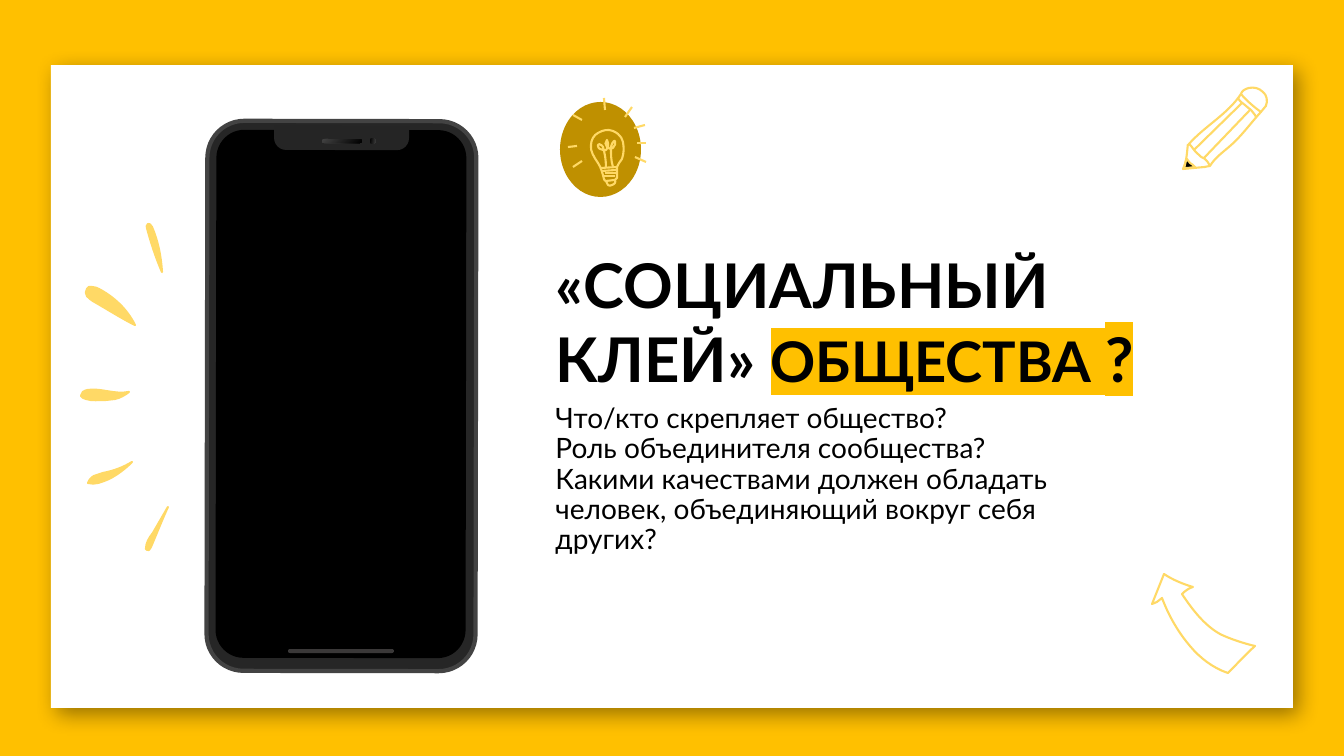
"""Builds a yellow slide with a phone, a heading, questions and line doodles."""
from lxml.etree import SubElement
from pptx import Presentation
from pptx.dml.color import RGBColor
from pptx.enum.shapes import MSO_CONNECTOR, MSO_SHAPE
from pptx.enum.text import MSO_ANCHOR
from pptx.oxml import parse_xml
from pptx.oxml.ns import nsdecls, qn
from pptx.util import Emu, Pt

PX = 914400 / 100.8
INK = {
    "gold": "FFC000", "white": "FFFFFF", "black": "000000", "case": "262626",
    "rim": "434343", "notch": "252525", "bar": "3A3838", "dark": "010101",
    "pale": "FFD966", "disc": "BF9000",
}
RGB = {name: RGBColor.from_string(code) for name, code in INK.items()}

deck = Presentation()
deck.slide_width, deck.slide_height = Emu(round(1344 * PX)), Emu(round(756 * PX))
slide = deck.slides.add_slide(deck.slide_layouts[6])
slide.background.fill.solid()
slide.background.fill.fore_color.rgb = RGB["gold"]
shapes = slide.shapes


def block(kind, box, color, turn=0, adj=()):
    item = shapes.add_shape(kind, *[Emu(round(n * PX)) for n in box])
    item.shadow.inherit = False
    item.fill.solid()
    item.fill.fore_color.rgb = RGB[color]
    item.line.fill.background()
    item.rotation = turn
    for i, part in enumerate(adj):
        item.adjustments[i] = part
    return item


def draw(steps, color=None):
    dots = [step[i:i + 2] for step in steps for i in range(0, len(step), 2)]
    pen = shapes.build_freeform(*dots[0], scale=PX)
    pen.add_line_segments(dots[1:], close=dots[0] == dots[-1])
    item = pen.convert_to_shape()
    legs = iter(list(item._element.spPr.iter(qn("a:lnTo"))))
    for step in steps[1:]:
        leg = next(legs)
        if len(step) == 6:
            leg.tag = qn("a:cubicBezTo")
            for rest in (next(legs), next(legs)):
                leg.append(rest[0])
                rest.getparent().remove(rest)
    item.shadow.inherit = False
    if color:
        item.fill.solid()
        item.fill.fore_color.rgb = RGB[color]
    else:
        item.fill.background()
    item.line.color.rgb = RGB["pale"]
    item.line.width = Pt(1.5)


card = block(MSO_SHAPE.RECTANGLE, (51, 65, 1242, 643), "white")
glow = card._element.spPr.find(qn("a:effectLst"))
glow.append(parse_xml(
    f'<a:outerShdw {nsdecls("a")} blurRad="190500" dist="88900" dir="2700000" algn="tl" '
    'rotWithShape="0"><a:srgbClr val="000000"><a:alpha val="40000"/></a:srgbClr></a:outerShdw>'))

case = block(MSO_SHAPE.ROUNDED_RECTANGLE, (207, 121, 269, 550), "case", 0.1, [0.137])
case.line.color.rgb = RGB["rim"]
case.line.width = Pt(3)
block(MSO_SHAPE.ROUNDED_RECTANGLE, (216, 130, 250, 528), "black", 0.1, [0.112])
block(MSO_SHAPE.ROUND_2_SAME_RECTANGLE, (274, 126, 135, 24), "notch", 180.1, [0.5, 0])
block(MSO_SHAPE.ROUNDED_RECTANGLE, (288, 649, 106, 4), "bar", 0, [0.5])
lens = block(MSO_SHAPE.OVAL, (370, 138, 6, 6), "rim", 97.1)
slot = block(MSO_SHAPE.ROUNDED_RECTANGLE, (322, 139, 40, 4), "rim", 0, [0.5])
for item, angle in ((lens, 270), (slot, 315)):
    item.fill.gradient()
    item.fill.gradient_angle = angle
    for stop, color in zip(item.fill.gradient_stops, ("rim", "dark")):
        stop.color.rgb = RGB[color]

pars = []
for box in ((542, 234, 641, 137), (542, 391, 602, 187)):
    frame = shapes.add_textbox(*[Emu(round(n * PX)) for n in box]).text_frame
    frame.word_wrap = True
    frame.vertical_anchor = MSO_ANCHOR.TOP
    frame.margin_left = frame.margin_right = Pt(9.6)
    frame.margin_top = frame.margin_bottom = Pt(9.6)
    par = frame.paragraphs[0]
    par.font.name = "Lato"
    par.font.color.rgb = RGB["black"]
    pars.append(par)
title, body = pars

title.font.bold = True
for words, size, mark in (("«СОЦИАЛЬНЫЙ КЛЕЙ» ", 44, False),
                          ("ОБЩЕСТВА ", 40, True), ("?", 44, True)):
    run = title.add_run()
    run.text = words
    run.font.size = Pt(size)
    if mark:
        light = SubElement(run._r.get_or_add_rPr(), qn("a:highlight"))
        SubElement(light, qn("a:srgbClr")).set("val", INK["gold"])

body.text = ("Что/кто скрепляет общество?\vРоль объединителя сообщества?\v"
             "Какими качествами должен обладать человек, объединяющий вокруг себя других?")
body.font.size = Pt(20)
body.line_spacing = 0.9
body.space_after = Pt(21)

sparks = [
    [(168, 507), (153, 533), (149, 538, 146, 543, 146, 549), (146, 550, 148, 550, 149, 550),
     (150, 549, 150, 548, 151, 547), (157, 533, 162, 520, 168, 507)],
    [(132, 462), (125, 469, 117, 475, 109, 479), (102, 482, 95, 485, 88, 483),
     (89, 480, 92, 477, 94, 476), (97, 475, 100, 474, 103, 473), (114, 471, 124, 467, 132, 462)],
    [(129, 392), (125, 395, 120, 398, 115, 399), (112, 399, 109, 400, 106, 400),
     (99, 400, 92, 401, 86, 399), (84, 398, 82, 398, 81, 396), (81, 394, 82, 393, 83, 392),
     (85, 391, 86, 390, 88, 390), (101, 388, 115, 395, 129, 392)],
    [(135, 325), (127, 309, 114, 297, 99, 289), (97, 288, 95, 287, 92, 287),
     (90, 286, 88, 287, 87, 289), (85, 291, 86, 294, 87, 296), (89, 298, 91, 300, 93, 301),
     (107, 309, 121, 318, 135, 325)],
    [(162, 272), (161, 256, 158, 241, 152, 227), (151, 225, 149, 223, 148, 224),
     (146, 225, 147, 227, 147, 228), (151, 243, 156, 258, 162, 272)],
]
for steps in sparks:
    draw(steps, "pale")

block(MSO_SHAPE.OVAL, (560, 102, 81, 95), "disc")
bulb = [
    [(606, 181), (605, 181, 604, 180, 604, 179), (603, 175, 601, 167, 598, 163),
     (594, 157, 590, 151, 591, 145), (591, 140, 594, 135, 598, 133),
     (603, 130, 608, 129, 613, 131), (615, 132, 617, 133, 618, 134),
     (621, 136, 622, 139, 623, 142), (624, 148, 624, 153, 622, 159),
     (620, 162, 618, 164, 617, 167), (617, 170, 617, 175, 617, 178),
     (617, 179, 616, 180, 615, 180), (606, 181)],
    [(606, 167), (606, 160, 605, 154, 603, 147), (602, 146, 602, 145, 601, 145),
     (600, 144, 599, 144, 598, 145), (598, 145, 598, 146, 598, 146),
     (598, 147, 599, 149, 600, 149), (601, 150, 602, 150, 603, 150),
     (604, 150, 605, 151, 606, 150), (607, 149, 608, 148, 608, 146),
     (608, 145, 608, 144, 608, 143), (608, 142, 608, 141, 607, 140),
     (605, 142, 605, 145, 607, 147), (608, 149, 611, 149, 613, 148),
     (615, 146, 616, 143, 615, 141), (615, 141, 614, 141, 614, 141),
     (614, 141, 614, 141, 614, 141), (612, 142, 612, 145, 611, 147),
     (611, 154, 611, 161, 613, 167)],
    [(606, 181), (607, 182, 607, 184, 608, 185), (609, 186, 611, 186, 612, 185),
     (613, 185, 614, 184, 615, 183), (615, 182, 616, 181, 615, 180)],
]
arrow = [(1255, 646), (1245, 655, 1237, 664, 1228, 673), (1213, 668, 1200, 658, 1190, 646),
         (1172, 625, 1164, 603, 1162, 598), (1157, 602, 1156, 603, 1152, 604), (1164, 574),
         (1173, 580, 1183, 584, 1193, 587), (1189, 588, 1185, 591, 1182, 594),
         (1192, 609, 1204, 625, 1220, 634), (1230, 639, 1246, 644, 1255, 646)]
pencil = [
    [(1189, 144), (1205, 126, 1228, 114, 1241, 94), (1247, 101, 1254, 107, 1261, 112),
     (1250, 124, 1241, 137, 1229, 147), (1222, 153, 1215, 158, 1210, 166),
     (1209, 163, 1207, 161, 1205, 159), (1202, 158, 1200, 156, 1198, 154),
     (1194, 151, 1192, 146, 1189, 144)],
    [(1238, 98), (1239, 100, 1240, 101, 1241, 102), (1244, 104, 1247, 107, 1251, 110),
     (1252, 112, 1254, 113, 1255, 115), (1255, 116, 1256, 117, 1257, 117)],
    [(1241, 94), (1242, 91, 1245, 89, 1249, 88), (1254, 87, 1259, 88, 1263, 92),
     (1267, 95, 1268, 101, 1266, 106), (1265, 108, 1262, 110, 1261, 112)],
    [(1188, 144), (1187, 152, 1187, 161, 1183, 169), (1205, 167),
     (1206, 167, 1208, 166, 1210, 166)],
]
for steps in (*bulb, arrow, *pencil):
    draw(steps)
draw([(1187, 159), (1185, 162, 1185, 166, 1184, 169), (1185, 168, 1186, 168, 1188, 168),
      (1190, 168, 1193, 167, 1195, 167), (1193, 165, 1192, 164, 1190, 163),
      (1189, 162, 1188, 160, 1187, 159)], "black")

bands = [(601, 168, 617, 167), (602, 171, 616, 170), (605, 173, 617, 173), (603, 176, 615, 176)]
rays = [(573, 167, 582, 161), (568, 147, 577, 146), (582, 120, 573, 115), (605, 110, 604, 98),
        (625, 117, 632, 107), (634, 128, 645, 125), (637, 143, 646, 143), (635, 157, 646, 162)]
edges = [(1194, 150, 1242, 103), (1204, 158, 1250, 110)]
for ends in bands + rays + edges:
    line = shapes.add_connector(MSO_CONNECTOR.STRAIGHT, *[Emu(round(n * PX)) for n in ends])
    SubElement(line._element.spPr, qn("a:effectLst"))
    line.line.color.rgb = RGB["pale"]
    line.line.width = Pt(1.5)

deck.save("out.pptx")
